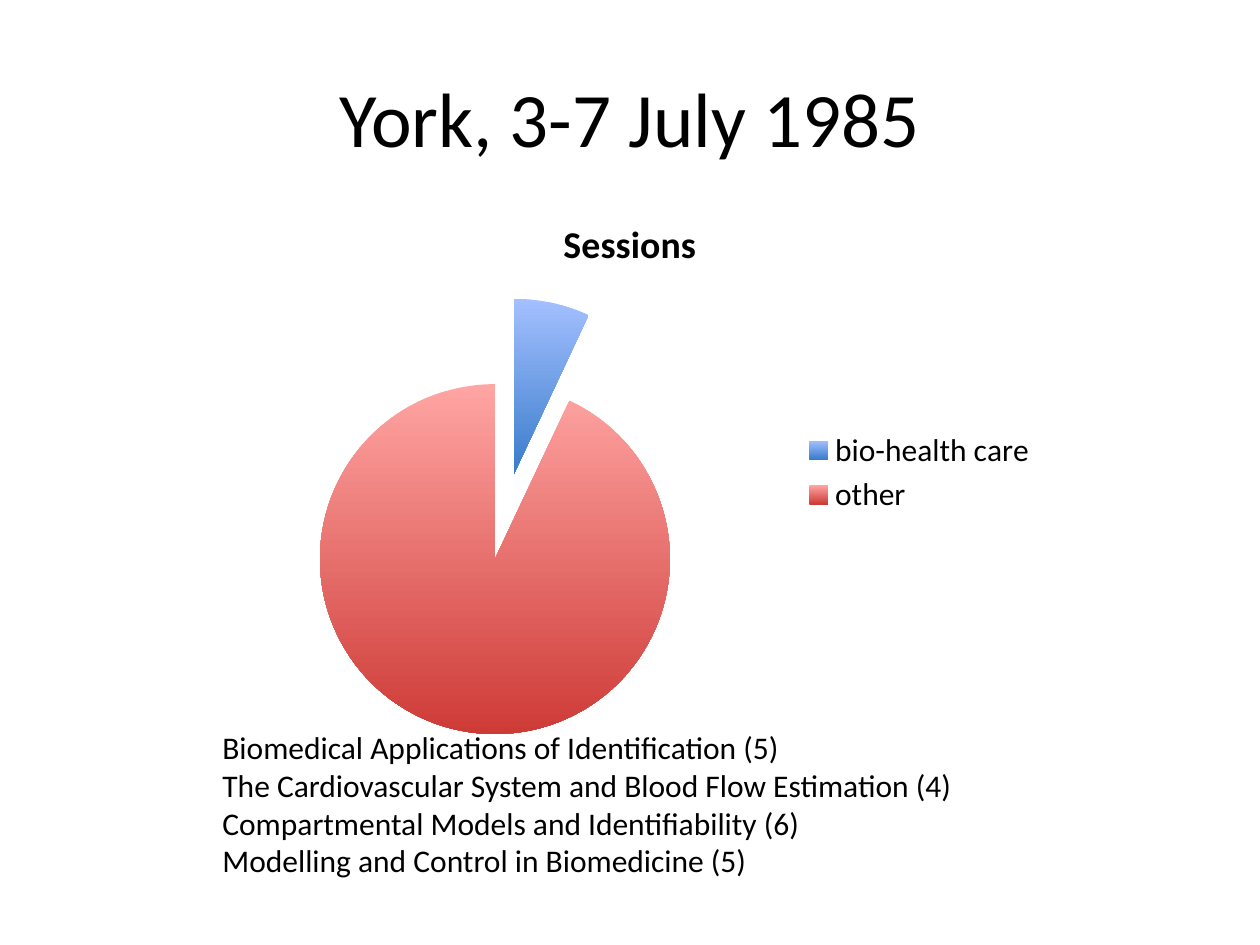
import pptx
import pptx.chart.data
import pptx.dml.color
import pptx.enum.chart
import pptx.enum.text
import pptx.util
from lxml import etree

Pt = pptx.util.Pt
FONT = "Calibri"
COLORS = {
    "text": "000000",
    "bio_top": "A3C0FF", "bio_bottom": "3A7CCB",
    "other_top": "FFA5A3", "other_bottom": "CE3B37",
}


def rgb(name):
    return pptx.dml.color.RGBColor.from_string(COLORS[name])


def style_font(font, size=18, bold=False, color="text"):
    font.name, font.size, font.bold = FONT, Pt(size), bold
    font.color.rgb = rgb(color)


def write_text(tf, text, align=None, **fmt):
    """Write one paragraph for each line of text."""
    for i, line in enumerate(text.split("\n")):
        p = tf.add_paragraph() if i else tf.paragraphs[0]
        p.alignment = align
        r = p.add_run()
        r.text = line
        style_font(r.font, **fmt)


def add_title(s, box, text):
    sp = s.shapes.title
    sp.left, sp.top, sp.width, sp.height = box
    sp.text_frame.vertical_anchor = pptx.enum.text.MSO_ANCHOR.MIDDLE
    write_text(sp.text_frame, text, size=44, align=pptx.enum.text.PP_ALIGN.CENTER)


def add_sessions_pie(s, box):
    data = pptx.chart.data.CategoryChartData()
    data.categories = ["bio-health care", "other"]
    data.add_series("Sessions", (7, 93))
    chart = s.shapes.add_chart(pptx.enum.chart.XL_CHART_TYPE.PIE, *box, data).chart
    style_font(chart.font)

    # Title and legend
    chart.has_title = True
    write_text(chart.chart_title.text_frame, "Sessions", size=21.6, bold=True)
    chart.chart_title.include_in_layout = False
    chart.has_legend = True
    chart.legend.position = pptx.enum.chart.XL_LEGEND_POSITION.RIGHT
    chart.legend.include_in_layout = False
    style_font(chart.legend.font)

    # Slices, shaded from top to bottom
    plot = chart.plots[0]
    plot.vary_by_categories = True
    series = plot.series[0]
    for i, name in enumerate(("bio", "other")):
        fill = series.points[i].format.fill
        fill.gradient()
        fill.gradient_angle = 270
        for stop, end in zip(fill.gradient_stops, ("top", "bottom")):
            stop.color.rgb = rgb(f"{name}_{end}")

    # Every slice is pulled out by a quarter
    ns = "{http://schemas.openxmlformats.org/drawingml/2006/chart}"
    explosion = etree.Element(ns + "explosion", val="25")
    ser = series._element
    ser.find(ns + "dPt").addprevious(explosion)


def add_session_list(s, box, text):
    tf = s.shapes.add_textbox(*box).text_frame
    tf.word_wrap = False
    write_text(tf, text)


def main():
    prs = pptx.Presentation()
    prs.slide_width, prs.slide_height = Pt(720), Pt(540)
    s = prs.slides.add_slide(prs.slide_layouts[5])
    add_title(s, (Pt(36), Pt(21.6), Pt(648), Pt(90)), "York, 3-7 July 1985")
    add_sessions_pie(s, (Pt(120), Pt(110), Pt(480), Pt(320)))
    add_session_list(
        s, (Pt(120), Pt(412.5), Pt(435.6), Pt(116.6)),
        "Biomedical Applications of Identification (5)\n"
        "The Cardiovascular System and Blood Flow Estimation (4)\n"
        "Compartmental Models and Identifiability (6)\n"
        "Modelling and Control in Biomedicine (5)")
    prs.save("out.pptx")


if __name__ == "__main__":
    main()
